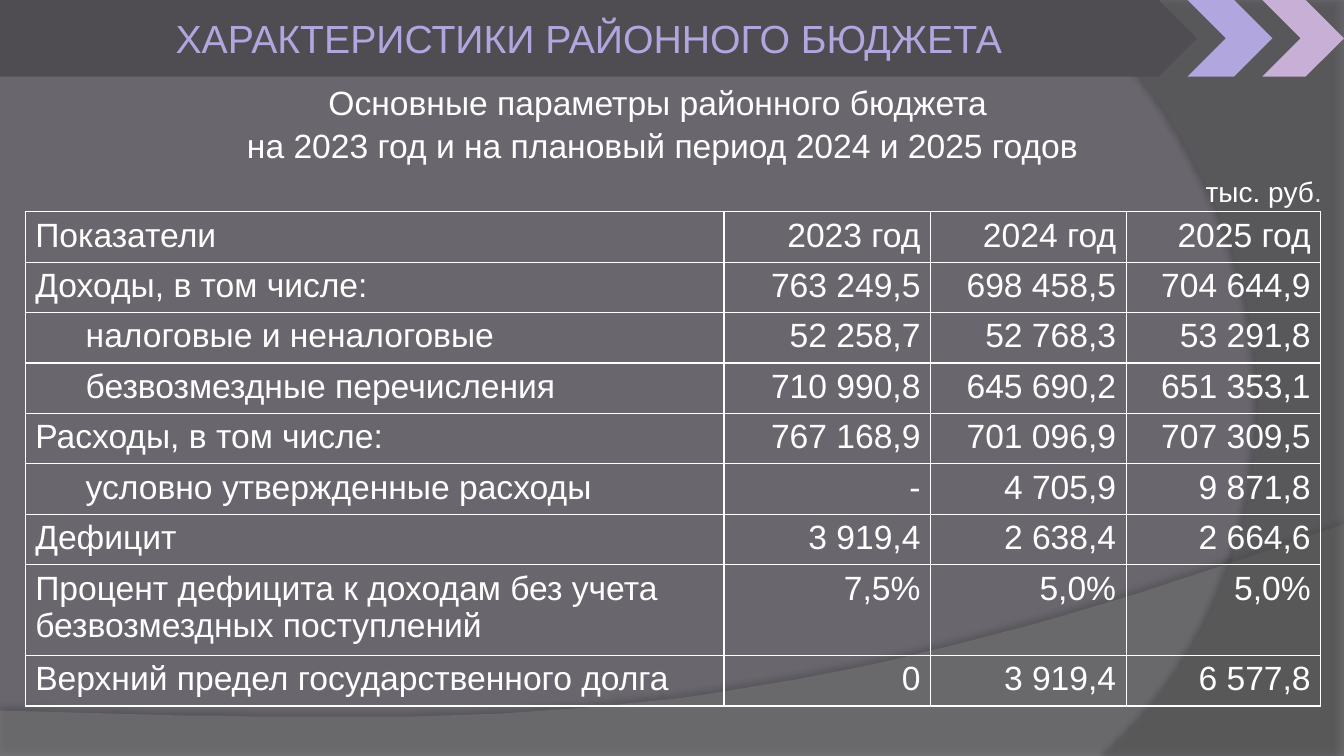
import lxml.etree
import pptx
import pptx.dml.color
import pptx.enum.shapes
import pptx.enum.text
import pptx.oxml.ns
import pptx.util

EMU_PER_PX = 9144  # 100 px to the inch
WIDTH, HEIGHT = 1333, 750
BAND_HEIGHT = 76
COLORS = {
    "background": "69676D",
    "wave": "7F7F7F",
    "arc": "5E5E5E",
    "band": "4F4D52",
    "lilac": "B2A6DF",
    "pink": "C8AFD6",
    "text": "FFFFFF",
    "period": "E1E0E2",
    "shadow": "000000",
}
SHAPE = pptx.enum.shapes.MSO_SHAPE
ALIGN = pptx.enum.text.PP_ALIGN
ANCHOR = pptx.enum.text.MSO_ANCHOR
FIT = pptx.enum.text.MSO_AUTO_SIZE

YEARS = ["2023 год", "2024 год", "2025 год"]
COLUMN_WIDTHS = [693, 205, 194, 193]
ROW_HEIGHT, TALL_ROW_HEIGHT = 50, 90
# label, indent level, values by year
BUDGET = [
    ("Показатели", 0, YEARS),
    ("Доходы, в том числе:", 0, ["763 249,5", "698 458,5", "704 644,9"]),
    ("налоговые и неналоговые", 1, ["52 258,7", "52 768,3", "53 291,8"]),
    ("безвозмездные перечисления", 1, ["710 990,8", "645 690,2", "651 353,1"]),
    ("Расходы, в том числе:", 0, ["767 168,9", "701 096,9", "707 309,5"]),
    ("условно утвержденные расходы", 1, ["-", "4 705,9", "9 871,8"]),
    ("Дефицит", 0, ["3 919,4", "2 638,4", "2 664,6"]),
    ("Процент дефицита к доходам без учета безвозмездных поступлений", 0,
     ["7,5%", "5,0%", "5,0%"]),
    ("Верхний предел государственного долга", 0, ["0", "3 919,4", "6 577,8"]),
]


def px(length):
    return pptx.util.Emu(round(length * EMU_PER_PX))


def rgb(name):
    return pptx.dml.color.RGBColor.from_string(COLORS[name])


def add_xml(parent, tag, **attributes):
    element = lxml.etree.SubElement(parent, pptx.oxml.ns.qn(tag))
    for name, value in attributes.items():
        element.set(name, str(value))
    return element


def apply_format(target, values):
    for name, value in values.items():
        setattr(target, name, value)


def bezier(start, control1, control2, end, steps=40):
    """Points along a cubic curve, without its start."""
    points = []
    for step in range(1, steps + 1):
        t = step / steps
        weights = ((1 - t) ** 3, 3 * t * (1 - t) ** 2, 3 * t * t * (1 - t), t ** 3)
        points.append(tuple(
            sum(weight * value for weight, value in zip(weights, axis))
            for axis in zip(start, control1, control2, end)))
    return points


class BudgetSlide:
    font_name = "Arial"

    def __init__(self, presentation):
        self.slide = presentation.slides.add_slide(presentation.slide_layouts[5])
        self.shapes = self.slide.shapes
        fill = self.slide.background.fill
        fill.solid()
        fill.fore_color.rgb = rgb("background")

    def add_text(self, paragraph, text, size, color="text", **paragraph_format):
        apply_format(paragraph, paragraph_format)
        run = paragraph.add_run()
        run.text = text
        apply_format(run.font, {"name": self.font_name, "size": pptx.util.Pt(size)})
        run.font.color.rgb = rgb(color)

    def paint(self, shape, color):
        shape.shadow.inherit = False
        shape.fill.solid()
        shape.fill.fore_color.rgb = rgb(color)
        shape.line.fill.background()

    def preset(self, kind, left, top, width, height, color):
        self.paint(self.shapes.add_shape(kind, px(left), px(top), px(width), px(height)), color)

    def backdrop(self, points, color, opacity, shadow_opacity, distance, angle):
        """Translucent outline with a soft shadow; distance in points."""
        builder = self.shapes.build_freeform(*points[0], scale=EMU_PER_PX)
        builder.add_line_segments(points[1:], close=True)
        shape = builder.convert_to_shape()
        self.paint(shape, color)
        properties = shape.element.spPr
        fill_color = properties.find(".//" + pptx.oxml.ns.qn("a:srgbClr"))
        add_xml(fill_color, "a:alpha", val=opacity * 1000)
        effects = properties.find(pptx.oxml.ns.qn("a:effectLst"))
        shadow = add_xml(effects, "a:outerShdw", blurRad=pptx.util.Pt(4),
                         dist=pptx.util.Pt(distance), dir=angle * 60000,
                         algn="ctr", rotWithShape=0)
        shadow_color = add_xml(shadow, "a:srgbClr", val=COLORS["shadow"])
        add_xml(shadow_color, "a:alpha", val=shadow_opacity * 1000)

    def title(self, text, left, top, width, height):
        title = self.shapes.title
        apply_format(title, {"left": px(left), "top": px(top),
                             "width": px(width), "height": px(height)})
        apply_format(title.text_frame, {"vertical_anchor": ANCHOR.MIDDLE,
                                        "word_wrap": True, "auto_size": FIT.NONE})
        self.add_text(title.text_frame.paragraphs[0], text, 28, "lilac",
                      alignment=ALIGN.CENTER)
        title.element.getparent().append(title.element)  # bring to front

    def text_box(self, left, top, width, height, wrap=True):
        frame = self.shapes.add_textbox(px(left), px(top), px(width), px(height)).text_frame
        frame.word_wrap = wrap
        return frame

    def border(self, cell):
        properties = cell._tc.get_or_add_tcPr()
        for position, side in enumerate(("L", "R", "T", "B")):
            line = add_xml(properties, f"a:ln{side}", w=pptx.util.Pt(1))
            fill = add_xml(line, "a:solidFill")
            add_xml(fill, "a:srgbClr", val=COLORS["text"])
            properties.insert(position, line)

    def table(self, left, top, rows, widths, heights):
        table = self.shapes.add_table(len(rows), len(widths), px(left), px(top),
                                      px(sum(widths)), px(sum(heights))).table
        apply_format(table, {"first_row": False, "horz_banding": False})
        for column, width in zip(table.columns, widths):
            column.width = px(width)
        for row, height, (label, level, values) in zip(table.rows, heights, rows):
            row.height = px(height)
            for index, (cell, text) in enumerate(zip(row.cells, [label, *values])):
                paragraph = cell.text_frame.paragraphs[0]
                if index:
                    self.add_text(paragraph, text, 24, alignment=ALIGN.RIGHT)
                else:
                    self.add_text(paragraph, text, 24, level=level)
                    paragraph._p.get_or_add_pPr().set("marL", str(px(50 * level)))
                cell.fill.background()
                self.border(cell)


def main():
    presentation = pptx.Presentation()
    apply_format(presentation, {"slide_width": px(WIDTH), "slide_height": px(HEIGHT)})
    budget = BudgetSlide(presentation)

    wave = [(0, 705), (0, HEIGHT), (WIDTH, HEIGHT), (WIDTH, 520)]
    wave += bezier(wave[-1], (745, 729), (521, 719), wave[0])
    budget.backdrop(wave, "wave", 45, 35, 3.5, 270)
    arc = [(WIDTH, 2), (WIDTH, HEIGHT), (1095, HEIGHT)]
    arc += bezier(arc[-1], (1246, 619), (1357, 300), (1067, 0))
    budget.backdrop(arc, "arc", 40, 45, 4, 180)

    subtitle = budget.text_box(231, 76, 852, 91, wrap=False)
    budget.add_text(subtitle.paragraphs[0], "Основные параметры районного бюджета ", 24,
                    alignment=ALIGN.CENTER)
    budget.add_text(subtitle.add_paragraph(),
                    "на 2023 год и на плановый период 2024 и 2025 годов", 24,
                    alignment=ALIGN.CENTER, space_before=pptx.util.Pt(2))

    heights = [TALL_ROW_HEIGHT if label.startswith("Процент") else ROW_HEIGHT
               for label, _, _ in BUDGET]
    budget.table(25, 210, BUDGET, COLUMN_WIDTHS, heights)

    unit = budget.text_box(1186, 168, 147, 44).paragraphs[0]
    budget.add_text(unit, "тыс. руб", 20)
    budget.add_text(unit, ".", 20, "period")

    budget.preset(SHAPE.PENTAGON, 0, 0, 1187, BAND_HEIGHT, "band")
    budget.preset(SHAPE.CHEVRON, 1178, 0, 84, BAND_HEIGHT, "lilac")
    budget.preset(SHAPE.CHEVRON, 1252, 0, 81, BAND_HEIGHT, "pink")
    budget.title("ХАРАКТЕРИСТИКИ РАЙОННОГО БЮДЖЕТА", 0, 0, 1168, BAND_HEIGHT)

    presentation.save("out.pptx")


if __name__ == "__main__":
    main()
